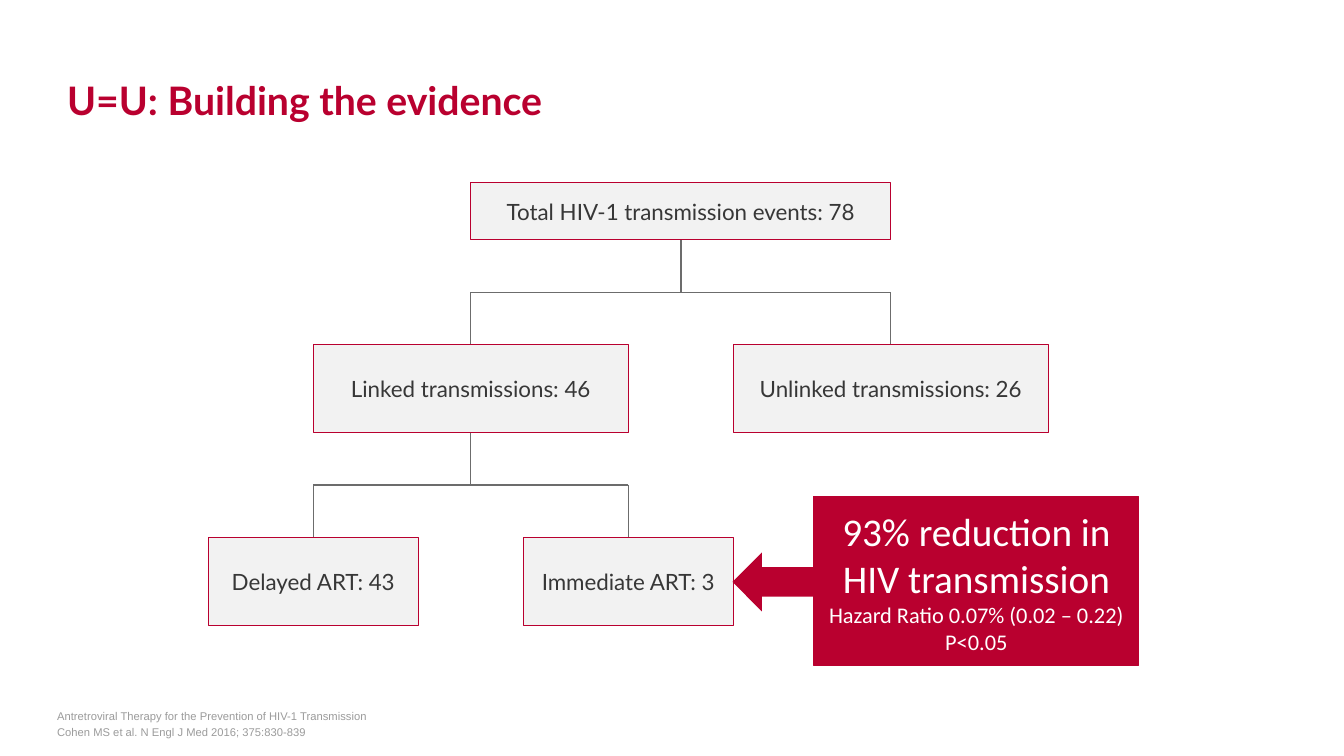
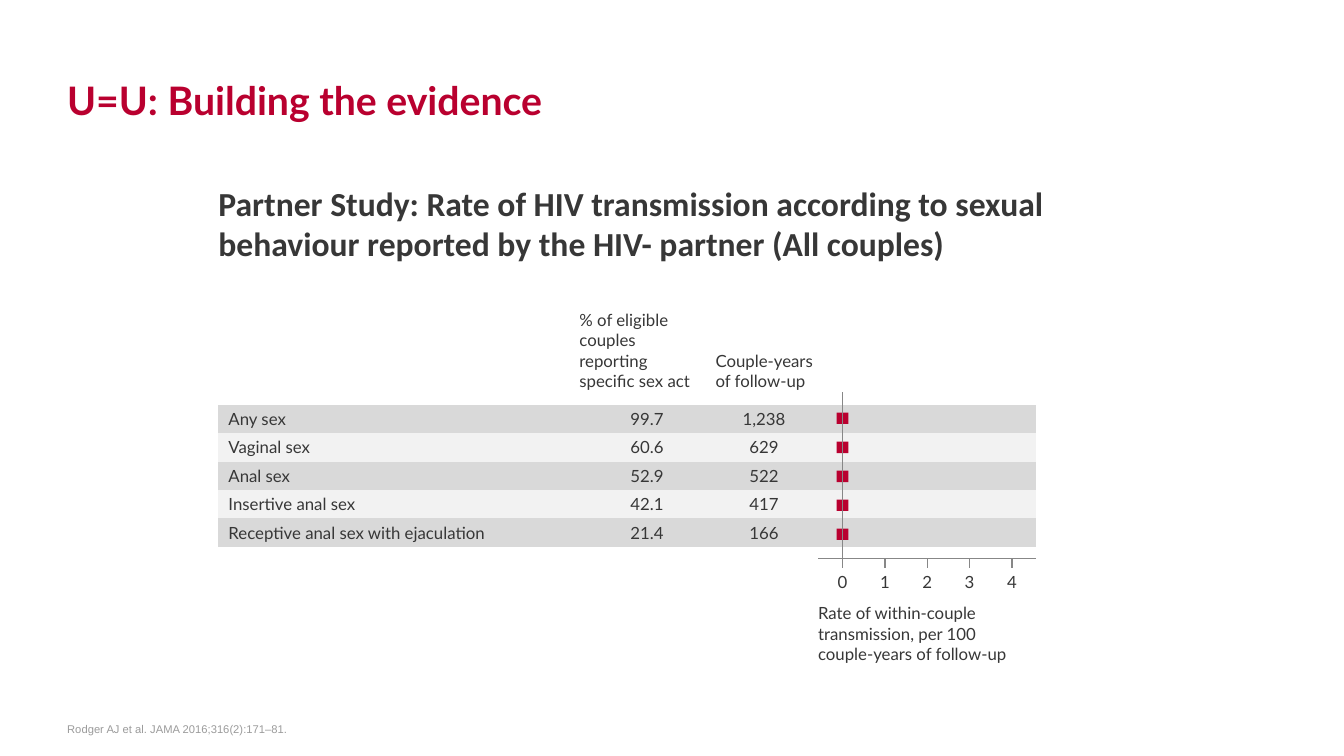
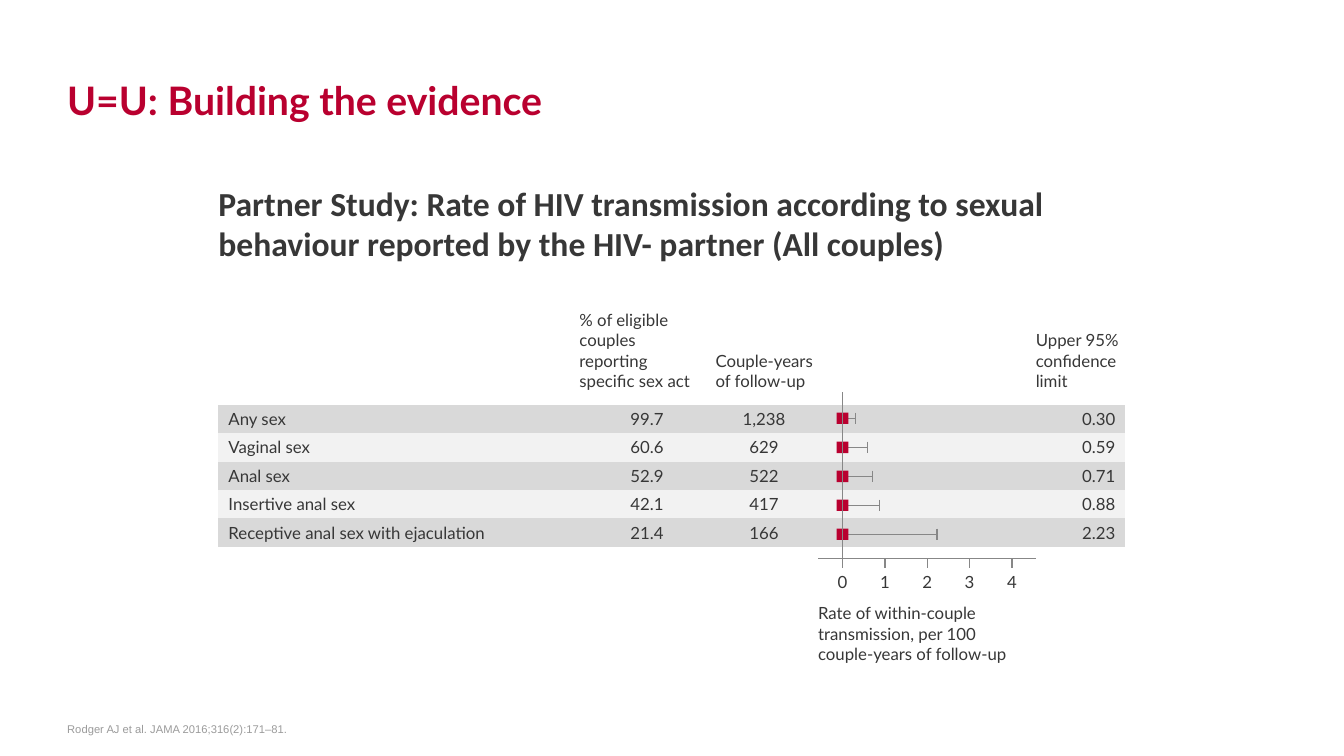
from dataclasses import dataclass

from lxml import etree
from pptx import Presentation
from pptx.dml.color import RGBColor
from pptx.enum.shapes import MSO_CONNECTOR, MSO_SHAPE
from pptx.enum.text import MSO_ANCHOR, PP_ALIGN
from pptx.oxml.ns import qn
from pptx.util import Inches, Pt

RECT, LEFT_ARROW = MSO_SHAPE.RECTANGLE, MSO_SHAPE.LEFT_ARROW
STRAIGHT = MSO_CONNECTOR.STRAIGHT
TOP, MIDDLE, BOTTOM = MSO_ANCHOR.TOP, MSO_ANCHOR.MIDDLE, MSO_ANCHOR.BOTTOM
LEFT, CENTER, RIGHT = PP_ALIGN.LEFT, PP_ALIGN.CENTER, PP_ALIGN.RIGHT

COLORS = {
    "red": "B9002F", "ink": "373737", "note": "9B9B9B", "white": "FFFFFF",
    "pale": "F2F2F2", "band": "D9D9D9", "branch": "6C6C6C", "axis": "878787",
}
STYLES = {
    "title": ("red", {"name": "Lato", "size": Pt(28), "bold": True}),
    "heading": ("ink", {"name": "Calibri", "size": Pt(24), "bold": True}),
    "note": ("note", {"name": "Arial", "size": Pt(8)}),
    "node": ("ink", {"name": "Lato", "size": Pt(16)}),
    "label": ("ink", {"name": "Lato", "size": Pt(12)}),
    "claim": ("white", {"name": "Calibri", "size": Pt(28)}),
    "detail": ("white", {"name": "Calibri", "size": Pt(16)}),
}
NO_STYLE = "{2D5ABB26-0587-4C30-8999-92F81FD0307C}"

TITLE = "U=U: Building the evidence"
HEADING = ("Partner Study: Rate of HIV transmission according to sexual "
           "behaviour reported by the HIV- partner (All couples)")
STUDY_NOTE = ["Rodger AJ et al. JAMA 2016;316(2):171–81."]
TRIAL_NOTE = ["Antretroviral Therapy for the Prevention of HIV-1 Transmission",
              "Cohen MS et al. N Engl J Med 2016; 375:830-839"]
ACTS = [
    ("Any sex", "99.7", "1,238", "0.30"),
    ("Vaginal sex", "60.6", "629", "0.59"),
    ("Anal sex", "52.9", "522", "0.71"),
    ("Insertive anal sex", "42.1", "417", "0.88"),
    ("Receptive anal sex with ejaculation", "21.4", "166", "2.23"),
]
NODES = [
    ("Total HIV-1 transmission events: 78", 5, 0, 8, 3.25),
    ("Linked transmissions: 46", 2, 9.25, 6, 5),
    ("Unlinked transmissions: 26", 10, 9.25, 6, 5),
    ("Delayed ART: 43", 0, 20.25, 4, 5),
    ("Immediate ART: 3", 6, 20.25, 4, 5),
]
BRANCHES = [(9, 3.25, 5, 13), (5, 14.25, 2, 8)]


@dataclass
class Grid:
    """A box in inches, divided into columns and rows."""
    left: float
    top: float
    width: float
    height: float
    cols: float
    rows: float

    def point(self, col, row):
        """Return the slide position of a grid point."""
        return (Inches(self.left + col * self.width / self.cols),
                Inches(self.top + row * self.height / self.rows))

    def area(self, col, row, cols, rows):
        """Return left, top, width and height of a block of cells."""
        return (*self.point(col, row), Inches(cols * self.width / self.cols),
                Inches(rows * self.height / self.rows))

    def sub(self, block, cols, rows):
        """Return a block of cells as a grid of its own."""
        return Grid(*(n.inches for n in self.area(*block)), cols, rows)


PAGE = Grid(0, 0, 13.33, 7.5, 40, 30)


def rgb(name):
    """Return a named colour."""
    return RGBColor.from_string(COLORS[name])


def write(tf, paras, style, align=LEFT, space=0):
    """Fill a text frame with styled paragraphs."""
    color, font = STYLES[style]
    for i, text in enumerate(paras):
        p = tf.add_paragraph() if i or tf.paragraphs[0].runs else tf.paragraphs[0]
        p.text, p.alignment = text, align
        if i and space:
            p.space_before = Pt(space)
        for r in p.runs:
            for key, value in font.items():
                setattr(r.font, key, value)
            r.font.color.rgb = rgb(color)


def add_text(s, area, paras, style, anchor=BOTTOM, align=LEFT, space=0, right=0):
    """Add a wrapping text box."""
    tf = s.shapes.add_textbox(*area).text_frame
    frame = {"word_wrap": True, "vertical_anchor": anchor, "margin_left": 0,
             "margin_top": 0, "margin_right": Inches(right), "margin_bottom": 0}
    for key, value in frame.items():
        setattr(tf, key, value)
    write(tf, paras, style, align, space)


def add_block(s, area, fill, line=None, shape=RECT):
    """Add a filled shape and return its text frame."""
    sp = s.shapes.add_shape(shape, *area)
    sp.shadow.inherit = False
    sp.fill.solid()
    sp.fill.fore_color.rgb = rgb(fill)
    if line:
        sp.line.color.rgb = rgb(line)
        sp.line.width = Pt(0.75)
    else:
        sp.line.fill.background()
    sp.text_frame.word_wrap = True
    sp.text_frame.vertical_anchor = MIDDLE
    return sp.text_frame


def add_line(s, grid, start, end, color):
    """Add a thin line between two grid points."""
    c = s.shapes.add_connector(STRAIGHT, *grid.point(*start), *grid.point(*end))
    c.line.color.rgb = rgb(color)
    c.line.width = Pt(1)
    etree.SubElement(c._element.spPr, qn("a:effectLst"))


def add_page(prs, note, note_col=2, note_row=27.9):
    """Add a blank slide with the shared title and a source note."""
    s = prs.slides.add_slide(prs.slide_layouts[6])
    add_text(s, PAGE.area(2, 0, 27, 4.9), [TITLE], "title")
    add_text(s, PAGE.area(note_col, note_row, 27, 1.3), note, "note", space=1.6)
    return s


def add_tree(s, grid):
    """Draw the tree of transmission events."""
    for col, row, first, last in BRANCHES:
        add_line(s, grid, (col, row), (col, row + 3), "branch")
        add_line(s, grid, (first, row + 3), (last, row + 3), "branch")
        for end in (first, last):
            add_line(s, grid, (end, row + 3), (end, row + 6), "branch")
    for text, *block in NODES:
        write(add_block(s, grid.area(*block), "pale", "red"), [text], "node", CENTER)


def add_callout(s, grid):
    """Draw the result panel with an arrow on its left."""
    tf = add_block(s, grid.area(0.2, 0, 0.8, 1), "red", "red")
    write(tf, ["93% reduction in\nHIV transmission"], "claim", CENTER)
    p = ["Hazard Ratio 0.07% (0.02 – 0.22)", "P<0.05"]
    write(tf, p, "detail", CENTER)
    add_block(s, grid.area(0, 0.33, 0.2, 0.35), "red", shape=LEFT_ARROW)


def add_rates(s, grid, limits):
    """Draw the banded table, leaving one column for the plot."""
    widths = [40.3, 13.9, 11.9] + ([20.1, 13.8] if limits else [24])
    aligns = [LEFT, CENTER, CENTER, LEFT, RIGHT]
    area = grid.area(0, 12, sum(widths), 4 * len(ACTS))
    t = s.shapes.add_table(len(ACTS), len(widths), *area).table
    t.first_row = t.horz_banding = False
    t._tbl.tblPr.find(qn("a:tableStyleId")).text = NO_STYLE
    for column, width in zip(t.columns, widths):
        column.width = grid.area(0, 0, width, 0)[2]
    for i, (act, share, years, limit) in enumerate(ACTS):
        t.rows[i].height = grid.area(0, 0, 0, 4)[3]
        for cell, text, align in zip(t.rows[i].cells, (act, share, years, "", limit), aligns):
            cell.margin_top = cell.margin_bottom = Inches(0.04)
            cell.fill.solid()
            cell.fill.fore_color.rgb = rgb("pale" if i % 2 else "band")
            if text:
                write(cell.text_frame, [text], "label", align)
            else:
                p = cell.text_frame.paragraphs[0]
                etree.SubElement(p._p, qn("a:endParaRPr"), sz="1200")


def add_plot(s, grid, limits):
    """Draw the rate markers, upper limits and axis."""
    zero, unit = 68.8, 4.67
    for i, act in enumerate(ACTS):
        row = 13.9 + 4.08 * i
        if limits:
            end = zero + unit * float(act[-1])
            add_line(s, grid, (zero, row), (end, row), "axis")
            add_line(s, grid, (end, row - 0.8), (end, row + 0.8), "axis")
        add_block(s, grid.area(zero - 0.65, row - 0.8, 1.3, 1.6), "red")
    add_line(s, grid, (66.1, 33.6), (90.1, 33.6), "axis")
    for n in range(5):
        col = zero + unit * n
        add_line(s, grid, (col, 33.6 if n else 10.2), (col, 34.9), "axis")
        add_text(s, grid.area(col - 2.67, 35.3, 5.34, 3), [str(n)], "label", align=CENTER)


def add_forest(s, grid, limits):
    """Draw the table, its column headings and the plot."""
    add_rates(s, grid, limits)
    add_plot(s, grid, limits)
    labels = [
        (39.8, 0, 14.3, ["% of eligible", "couples reporting specific sex act"]),
        (54.8, 0, 12.2, ["Couple-years of follow-up"]),
        (66.1, 38.4, 24, ["Rate of within-couple transmission, per 100 "
                          "couple-years of follow-up"]),
    ]
    if limits:
        labels.append((90.1, 0, 11, ["Upper 95% confidence limit"]))
    for col, row, width, paras in labels:
        add_text(s, grid.area(col, row, width, 10), paras, "label", right=0.08)


def add_trial_slide(prs):
    """Add the slide on transmission events."""
    s = add_page(prs, TRIAL_NOTE, 1.7, 28)
    add_tree(s, PAGE.sub((6.2, 7.25, 25, 17.56), 16, 25.25))
    add_callout(s, PAGE.sub((21.8, 19.72, 12.1, 6.68), 1, 1))


def add_study_slide(prs, limits):
    """Add a slide on rates by act, with or without upper limits."""
    s = add_page(prs, STUDY_NOTE)
    add_text(s, PAGE.area(6.5, 7.25, 25.9, 4), [HEADING], "heading", TOP)
    add_forest(s, PAGE.sub((6.5, 12.68, 27, 13.68), 100, 48.5), limits)


def main():
    """Build and save the presentation."""
    prs = Presentation()
    prs.slide_width, prs.slide_height = Inches(PAGE.width), Inches(PAGE.height)
    add_trial_slide(prs)
    for limits in (False, True):
        add_study_slide(prs, limits)
    prs.save("out.pptx")


if __name__ == "__main__":
    main()
